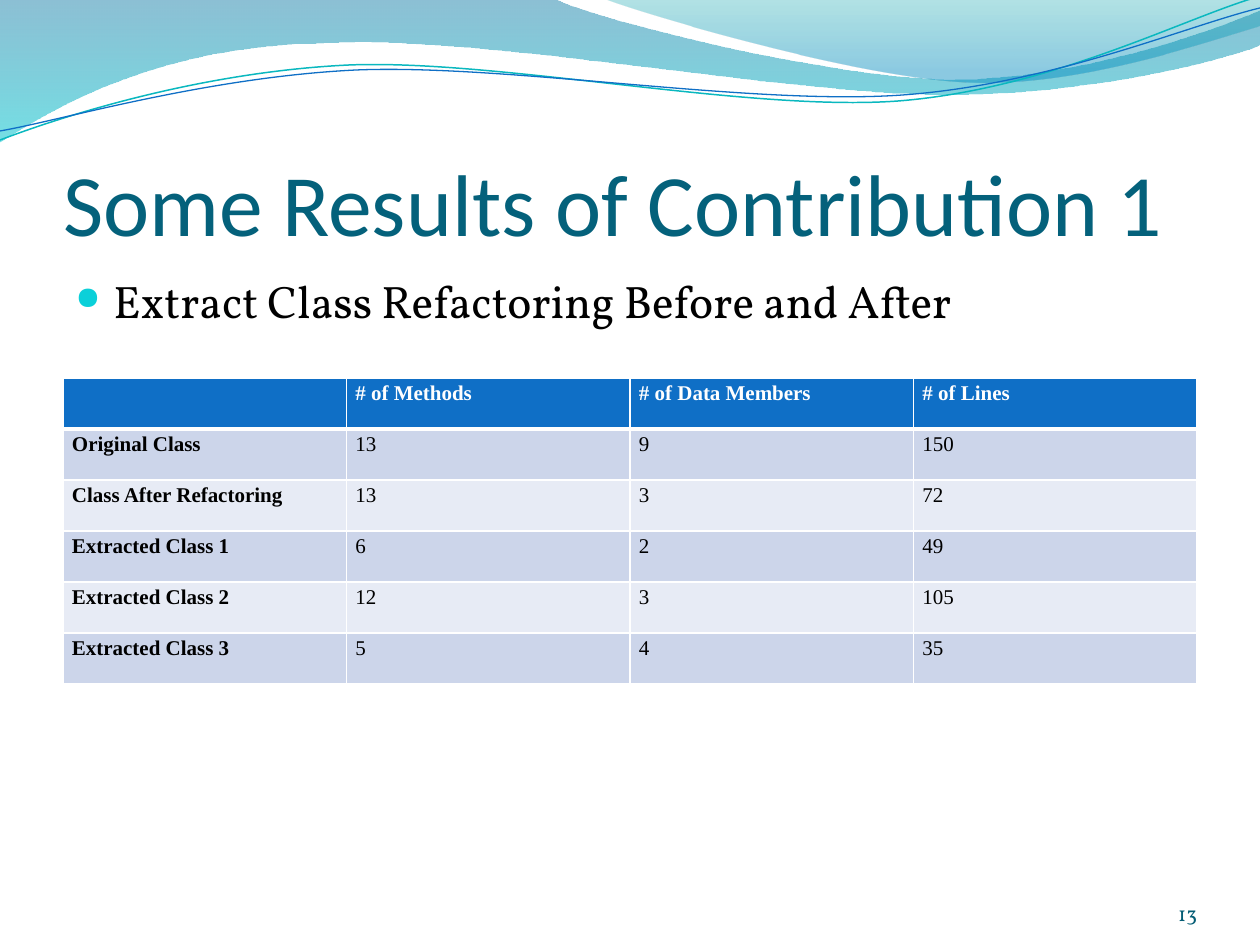
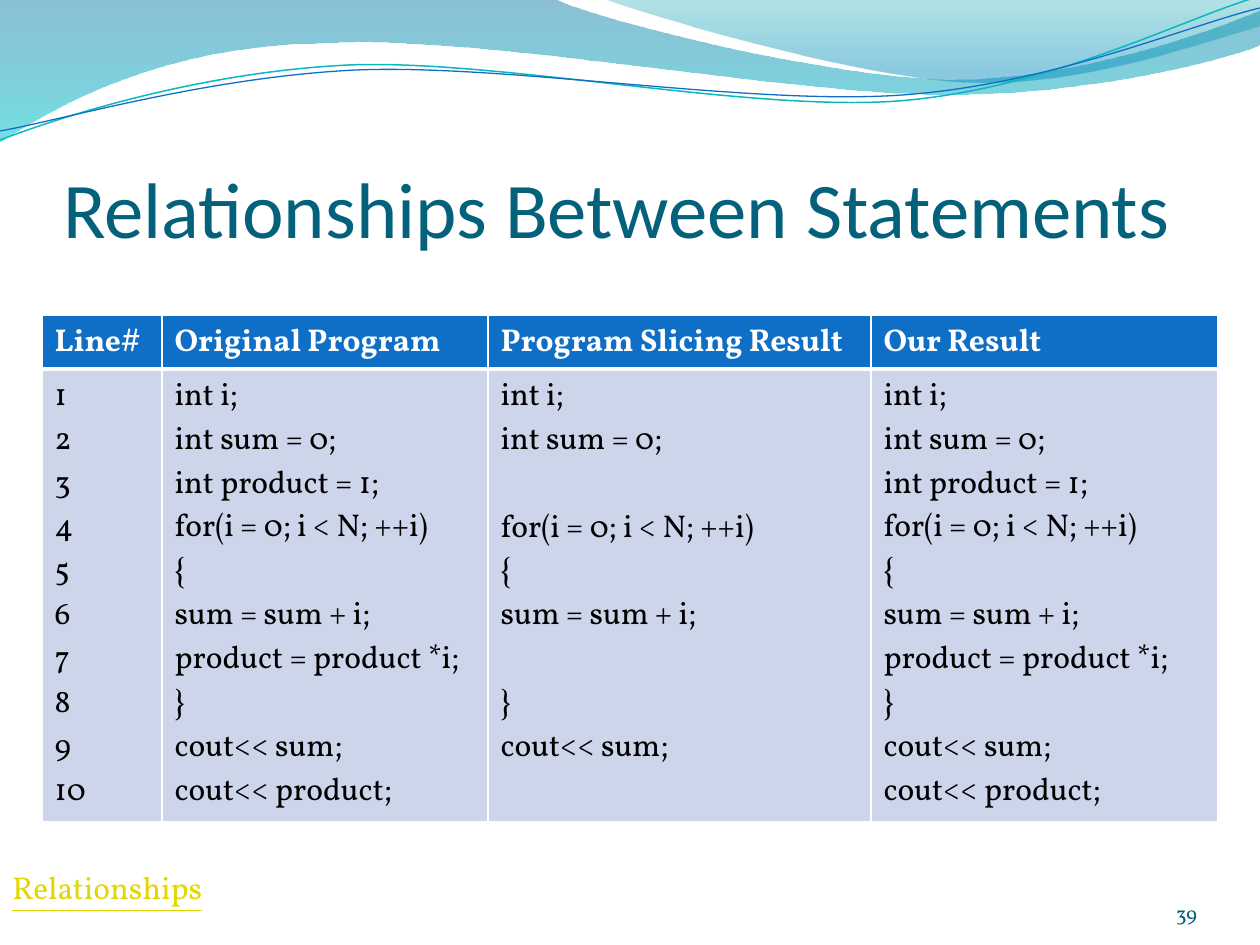
from lxml import etree
from pptx import Presentation
from pptx.dml.color import RGBColor
from pptx.enum.text import MSO_ANCHOR, MSO_AUTO_SIZE, PP_ALIGN
from pptx.oxml.ns import qn
from pptx.util import Emu, Pt

BOTTOM, NO_FIT = MSO_ANCHOR.BOTTOM, MSO_AUTO_SIZE.NONE
LEFT, RIGHT = PP_ALIGN.LEFT, PP_ALIGN.RIGHT

# Shared style
SCALE = 914400 / 126
TITLE_FONT, BODY_FONT, DATA_FONT = "Calibri", "Vollkorn", "Times New Roman"
TITLE_COLOR = RGBColor(0x04, 0x61, 0x7B)
NUMBER_COLOR = RGBColor(0x04, 0x5D, 0x75)
LINK_COLOR = RGBColor(0xE2, 0xD7, 0x00)
BULLET_COLOR = RGBColor(0x0B, 0xD0, 0xD9)
BLUE = RGBColor(0x0F, 0x6F, 0xC6)
TEAL = RGBColor(0x0A, 0xB8, 0xBF)
BAND_DARK = RGBColor(0xCC, 0xD5, 0xEA)
BAND_LIGHT = RGBColor(0xE7, 0xEB, 0xF5)
WHITE = RGBColor(0xFF, 0xFF, 0xFF)
BLACK = RGBColor(0, 0, 0)

# Header waves: start point, then lines (2 numbers) and Bézier curves (6 numbers)
# Gradient stops: position, colour, opacity in percent
WAVE_BANDS = [
    ((0, 0),
     [(554, -1), (600, 21, 837, 79, 955, 79), (1075, 79, 1207, 33, 1260, 11),
      (1261, 45), (1239, 55, 1096, 96, 940, 94), (784, 94, 481, 35, 324, 43),
      (163, 45, 58, 105, -1, 142)],
     [(0, RGBColor(0x00, 0x74, 0xA1), 45), (1, RGBColor(0x00, 0xC6, 0xCF), 55)]),
    ((604, -1),
     [(641, 14, 859, 78, 969, 82), (1079, 87, 1211, 40, 1260, 26), (1260, 0)],
     [(0, RGBColor(0x00, 0xA1, 0xA9), 30), (0.8, RGBColor(0x00, 0x8B, 0xBF), 45)]),
]
WAVE_LINES = [
    ((0, 140), [(60, 117, 199, 72, 349, 65), (498, 59, 747, 112, 898, 101),
                (1050, 89, 1182, 19, 1257, -3)], TEAL, 0.85),
    ((0, 131), [(59, 121, 207, 77, 357, 70), (508, 64, 752, 106, 903, 95),
                (1053, 84, 1186, 26, 1260, 8)], BLUE, 0.75),
]

# Slide content
RESULTS_TITLE = "Some Results of Contribution 1"
RESULTS_BULLET = "Extract Class Refactoring Before and After"
RESULTS = [
    ["", "# of Methods", "# of Data Members", "# of Lines"],
    ["Original Class", "13", "9", "150"],
    ["Class After Refactoring", "13", "3", "72"],
    ["Extracted Class 1", "6", "2", "49"],
    ["Extracted Class 2", "12", "3", "105"],
    ["Extracted Class 3", "5", "4", "35"],
]

STATEMENTS_TITLE = "Relationships Between Statements"
STATEMENTS_HEADER = ["Line#", "Original Program", "Program Slicing Result", "Our Result"]
PROGRAM = ["int i;", "int sum = 0;", "int product = 1;", "for(i = 0; i < N; ++i)", "{",
           "sum = sum + i;", "product = product *i;", "}", "cout<< sum;", "cout<< product;"]
SLICED = [None if "product" in line else line for line in PROGRAM]
LINE_NUMBERS = [str(n + 1) for n in range(len(PROGRAM))]
STATEMENTS = [LINE_NUMBERS, PROGRAM, SLICED, PROGRAM]
CODE_LINE_HEIGHT = 44
RELATIONSHIPS_LINK = "Relationships"


def px(value):
    return Emu(round(value * SCALE))


def add_run(paragraph, text, font, size, color, bold=False):
    run = paragraph.add_run()
    run.text = text
    run.font.name, run.font.size, run.font.bold = font, Pt(size), bold
    run.font.color.rgb = color
    return run


def add_text(slide, box, text, size, color):
    frame = slide.shapes.add_textbox(*map(px, box)).text_frame
    frame.word_wrap = True
    paragraph = frame.paragraphs[0]
    return frame, paragraph, add_run(paragraph, text, BODY_FONT, size, color)


# Waves
def add_wave(slide, start, segments, close):
    """Lay out every point as a line end, then join each three into a curve."""
    points = [(px(x), px(y)) for segment in segments
              for x, y in zip(segment[::2], segment[1::2])]
    builder = slide.shapes.build_freeform(*map(px, start))
    builder.add_line_segments(points, close=close)
    wave = builder.convert_to_shape()
    wave.shadow.inherit = False
    ends = iter(list(wave._element.iter(qn("a:lnTo"))))
    for segment in segments:
        first = next(ends)
        if len(segment) == 6:
            curve = etree.Element(qn("a:cubicBezTo"))
            first.addprevious(curve)
            for end in (first, next(ends), next(ends)):
                curve.append(end[0])
                end.getparent().remove(end)
    return wave


def add_waves(slide, master):
    """Draw the waves and hand them to the master, so all slides show them."""
    waves = []
    for start, segments, stops in WAVE_BANDS:
        band = add_wave(slide, start, segments, True)
        band.line.fill.background()
        band.fill.gradient()
        band.fill.gradient_angle = 270
        for stop, (position, color, _) in zip(band.fill.gradient_stops, stops):
            stop.position = position
            stop.color.rgb = color
        colors = band._element.spPr.iter(qn("a:srgbClr"))
        for node, (_, _, opacity) in zip(colors, stops):
            etree.SubElement(node, qn("a:alpha"), val=str(opacity * 1000))
        waves.append(band)
    for start, segments, color, width in WAVE_LINES:
        line = add_wave(slide, start, segments, False)
        line.fill.background()
        line.line.color.rgb, line.line.width = color, Pt(width)
        waves.append(line)
    for wave in waves:
        master.shapes._spTree.append(wave._element)


# Title and page number
def start_slide(prs, layout, title, size):
    slide = prs.slides.add_slide(layout)
    heading = slide.shapes.title
    heading.left, heading.top, heading.width, heading.height = map(px, (63, 96, 1134, 158))
    frame = heading.text_frame
    frame.auto_size, frame.vertical_anchor, frame.word_wrap = NO_FIT, BOTTOM, True
    frame.margin_left = frame.margin_right = frame.margin_bottom = 0
    frame.margin_top = px(6)
    frame.paragraphs[0].alignment = LEFT
    add_run(frame.paragraphs[0], title, TITLE_FONT, size, TITLE_COLOR)
    return slide


def add_page_number(slide, number):
    frame, paragraph, _ = add_text(slide, (1092, 876, 105, 50), number, 12, NUMBER_COLOR)
    frame.margin_left = frame.margin_right = frame.margin_top = frame.margin_bottom = 0
    frame.vertical_anchor = BOTTOM
    paragraph.alignment = RIGHT


# Tables
def style_cell(cell, row):
    props = cell._tc.get_or_add_tcPr()
    widths = {"L": 1, "R": 1, "T": 3 if row == 1 else 1, "B": 3 if row == 0 else 1}
    for side, width in widths.items():
        border = etree.SubElement(props, qn(f"a:ln{side}"), w=str(Pt(width)))
        fill = etree.SubElement(border, qn("a:solidFill"))
        etree.SubElement(fill, qn("a:srgbClr"), val=str(WHITE))
    cell.fill.solid()
    cell.fill.fore_color.rgb = BLUE if row == 0 else BAND_DARK if row % 2 else BAND_LIGHT


def add_grid(slide, left, top, widths, heights):
    box = map(px, (left, top, sum(widths), sum(heights)))
    table = slide.shapes.add_table(len(heights), len(widths), *box).table
    for column, width in zip(table.columns, widths):
        column.width = px(width)
    for row, height in zip(table.rows, heights):
        row.height = px(height)
    for r in range(len(heights)):
        for c in range(len(widths)):
            style_cell(table.cell(r, c), r)
    return table


def add_results_table(slide):
    columns = len(RESULTS[0])
    table = add_grid(slide, 63, 378, [1134 / columns] * columns, [51] * len(RESULTS))
    for r, values in enumerate(RESULTS):
        for c, value in enumerate(values):
            cell = table.cell(r, c)
            cell.margin_left = cell.margin_right = px(9)
            cell.margin_top = cell.margin_bottom = 0
            if value:
                paragraph = cell.text_frame.paragraphs[0]
                paragraph.line_spacing, paragraph.space_after = 1.15, Pt(10)
                add_run(paragraph, value, DATA_FONT, 12, BLACK if r else WHITE,
                        r == 0 or c == 0)


def add_statements_table(slide):
    table = add_grid(slide, 42, 315, [120, 326, 383, 347], [54, 453])
    for c, (header, lines) in enumerate(zip(STATEMENTS_HEADER, STATEMENTS)):
        add_run(table.cell(0, c).text_frame.paragraphs[0], header, BODY_FONT, 18, WHITE, True)
        frame = table.cell(1, c).text_frame
        skipped = 0
        for n, line in enumerate(lines):
            if line is None:
                skipped += 1
                continue
            paragraph = frame.add_paragraph() if n else frame.paragraphs[0]
            if skipped:
                paragraph.space_before = px(skipped * CODE_LINE_HEIGHT)
            add_run(paragraph, line, BODY_FONT, 18, BLACK)
            skipped = 0


def add_bullet(slide):
    _, paragraph, _ = add_text(slide, (63, 267, 1134, 605), RESULTS_BULLET, 26, BLACK)
    paragraph.space_before = Pt(5)
    props = paragraph._p.get_or_add_pPr()
    props.set("marL", str(px(38)))
    props.set("indent", str(px(-38)))
    color = etree.SubElement(props, qn("a:buClr"))
    etree.SubElement(color, qn("a:srgbClr"), val=str(BULLET_COLOR))
    etree.SubElement(props, qn("a:buSzPct"), val="70000")
    etree.SubElement(props, qn("a:buChar"), char="●")


def main():
    prs = Presentation()
    prs.slide_width, prs.slide_height = px(1260), px(945)
    layout = prs.slide_layouts.get_by_name("Title Only")

    # Results of the refactoring
    results = start_slide(prs, layout, RESULTS_TITLE, 50)
    add_waves(results, prs.slide_master)
    add_results_table(results)
    add_page_number(results, "13")
    add_bullet(results)

    # Relationships between statements
    statements = start_slide(prs, layout, STATEMENTS_TITLE, 45)
    add_page_number(statements, "39")
    add_statements_table(statements)
    _, _, link = add_text(statements, (0, 862, 257, 50), RELATIONSHIPS_LINK, 18, LINK_COLOR)
    link.font.underline = True

    prs.save("out.pptx")


if __name__ == "__main__":
    main()
